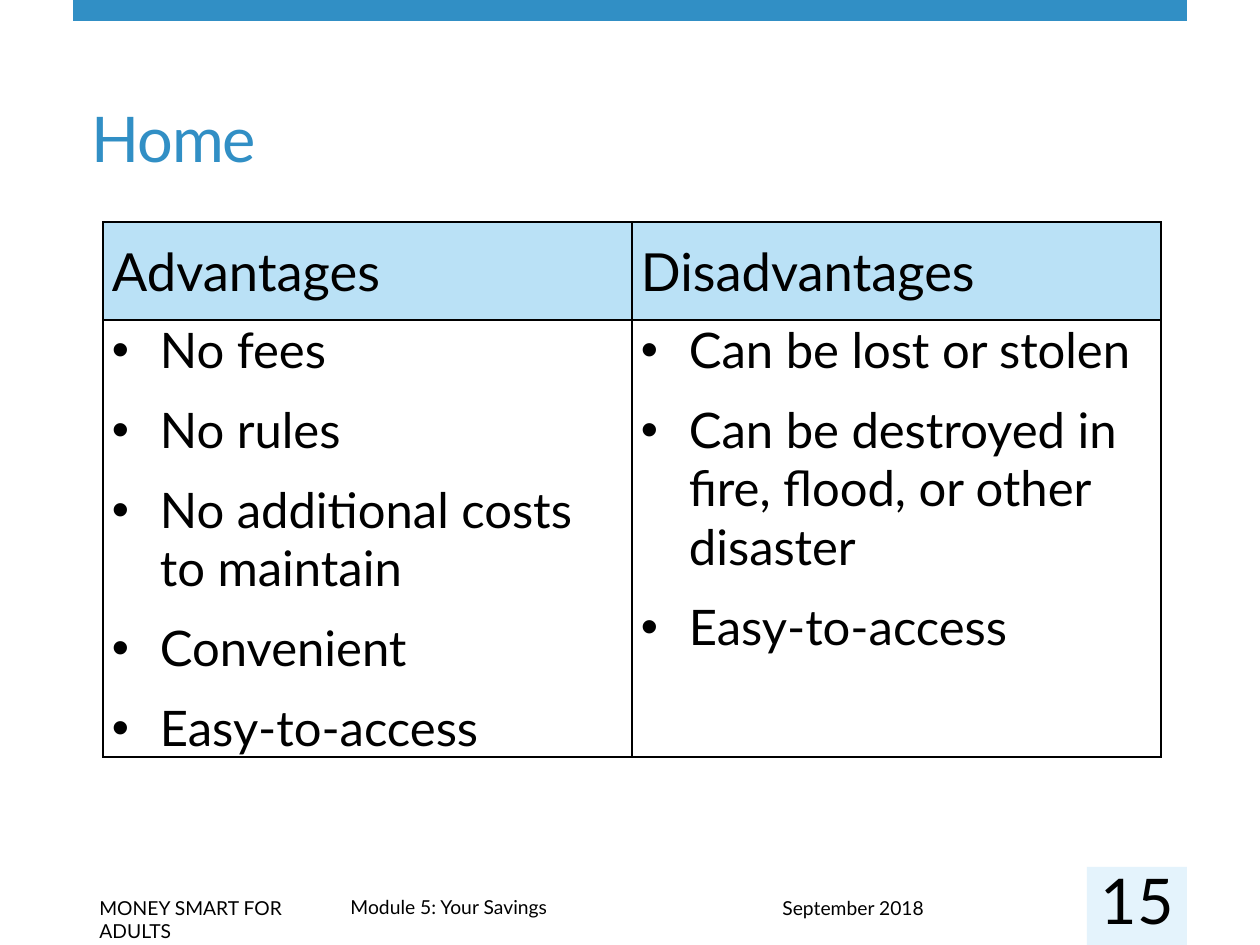
import pptx
import pptx.dml.color
import pptx.enum.shapes
import pptx.enum.text
import pptx.oxml
import pptx.oxml.ns
import pptx.util
from lxml import etree

RGB = pptx.dml.color.RGBColor
BLUE = RGB(0x31, 0x8F, 0xC5)
SKY = RGB(0x76, 0xC5, 0xEF)
PALE = RGB(0xE4, 0xF3, 0xFC)
BLACK = RGB(0, 0, 0)
FONT = "Lato"
ANCHOR = pptx.enum.text.MSO_ANCHOR
qn = pptx.oxml.ns.qn

HEADS = ["Advantages", "Disadvantages"]
LISTS = [
    ["No fees", "No rules", "No additional costs to maintain",
     "Convenient", "Easy-to-access"],
    ["Can be lost or stolen",
     "Can be destroyed in fire, flood, or other disaster",
     "Easy-to-access"],
]


def px(n):
    """Turn px (126 to the inch) into EMU."""
    return pptx.util.Emu(round(n * 914400 / 126))


def style(para, size, color=BLACK):
    para.font.name = FONT
    para.font.size = pptx.util.Pt(size)
    para.font.color.rgb = color


def add_rect(slide, x, y, w, h, color):
    rect = slide.shapes.add_shape(
        pptx.enum.shapes.MSO_SHAPE.RECTANGLE, px(x), px(y), px(w), px(h))
    rect.shadow.inherit = False
    rect.fill.solid()
    rect.fill.fore_color.rgb = color
    rect.line.fill.background()


def add_text(slide, x, y, w, h, text, size, color=BLACK):
    frame = slide.shapes.add_textbox(px(x), px(y), px(w), px(h)).text_frame
    frame.word_wrap = True
    frame.text = text
    style(frame.paragraphs[0], size, color)
    return frame


def add_title(slide, x, y, w, h):
    frame = add_text(slide, x, y, w, h, "Home", 36, BLUE)
    frame.vertical_anchor = ANCHOR.BOTTOM
    # Slightly tight letters
    frame.paragraphs[0].runs[0].font._element.set("spc", "-60")


def add_edges(cell):
    """Draw a 1 pt black line on all four sides."""
    props = cell._tc.get_or_add_tcPr()
    for spot, side in enumerate(("lnL", "lnR", "lnT", "lnB")):
        line = etree.Element(qn("a:" + side), w="12700")
        fill = etree.SubElement(line, qn("a:solidFill"))
        etree.SubElement(fill, qn("a:srgbClr"), val=str(BLACK))
        props.insert(spot, line)


def add_bullet(para):
    props = para._p.get_or_add_pPr()
    props.set("marL", str(px(48)))
    props.set("indent", str(-px(48)))
    etree.SubElement(props, qn("a:buFont"), typeface="Arial")
    etree.SubElement(props, qn("a:buChar"), char="•")
    tabs = etree.SubElement(props, qn("a:tabLst"))
    etree.SubElement(tabs, qn("a:tab"), pos=str(px(63)), algn="l")


def fill_head(cell, text):
    cell.vertical_anchor = ANCHOR.MIDDLE
    cell.fill.solid()
    cell.fill.fore_color.rgb = SKY
    tint = cell._tc.tcPr.find(".//" + qn("a:srgbClr"))
    etree.SubElement(tint, qn("a:alpha"), val="50000")
    cell.text = text
    para = cell.text_frame.paragraphs[0]
    para.space_after = pptx.util.Pt(12)
    style(para, 30)


def fill_list(cell, items):
    cell.fill.background()
    cell.text = "\n".join(items)
    for i, para in enumerate(cell.text_frame.paragraphs):
        add_bullet(para)
        para.space_before = pptx.util.Pt(6 if i else 0)
        para.space_after = pptx.util.Pt(6)
        style(para, 28)


def add_grid(slide, x, y, w, h):
    table = slide.shapes.add_table(
        2, len(HEADS), px(x), px(y), px(w), px(h)).table
    table.horz_banding = False
    top = 98
    table.rows[0].height = px(top)
    table.rows[1].height = px(h - top)
    for col, (head, items) in enumerate(zip(HEADS, LISTS)):
        table.columns[col].width = px(w / len(HEADS))
        fill_head(table.cell(0, col), head)
        fill_list(table.cell(1, col), items)
    for cell in table.iter_cells():
        cell.margin_left = cell.margin_right = px(9)
        cell.margin_top = cell.margin_bottom = 0
        add_edges(cell)


def add_footer(slide, x, y, w, h):
    # Captions
    add_text(slide, x + 14, y + 23, 263, 37, "MONEY SMART FOR ADULTS", 11)
    add_text(slide, x + 265, y + 22, 713, 37, "Module 5: Your Savings", 11)
    add_text(slide, x + 697, y + 23, 317, 37, "September 2018", 11)
    # Page number
    side = 100
    left = x + w - side
    add_rect(slide, left, y, side, h, PALE)
    frame = add_text(slide, left, y - 6, side, 57, "15", 36)
    frame.margin_left = frame.margin_right = 0
    frame.margin_top = frame.margin_bottom = 0
    frame.paragraphs[0].alignment = pptx.enum.text.PP_ALIGN.CENTER


def main():
    deck = pptx.Presentation()
    deck.slide_width, deck.slide_height = px(1260), px(945)
    slide = deck.slides.add_slide(deck.slide_layouts[6])
    add_rect(slide, 73, 0, 1114, 21, BLUE)
    add_title(slide, 79, 60, 1033, 121)
    add_grid(slide, 103, 222, 1058, 535)
    add_footer(slide, 73, 867, 1114, 78)
    deck.save("out.pptx")


if __name__ == "__main__":
    main()
